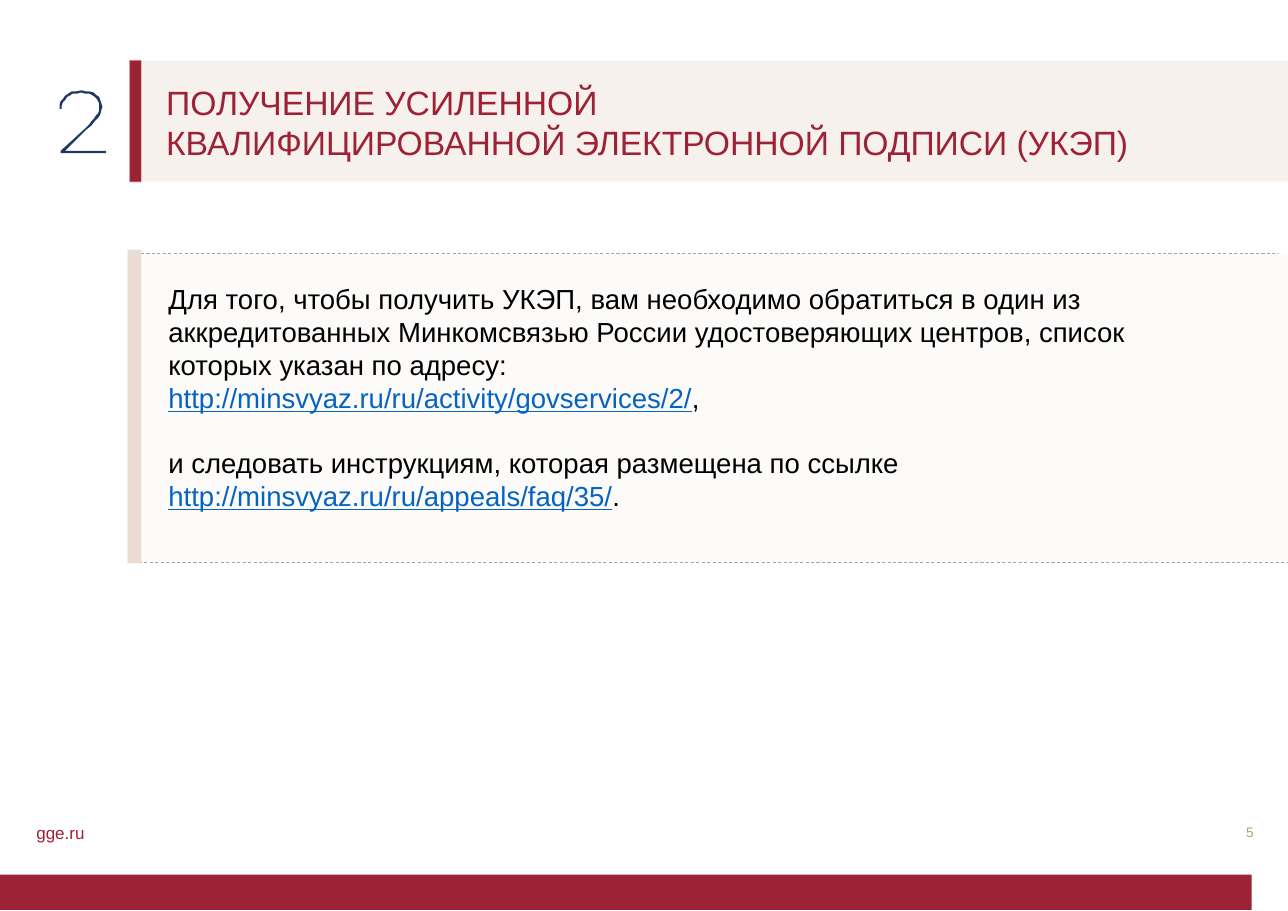
from dataclasses import dataclass
from lxml import etree
from pptx import Presentation
from pptx import util as u
from pptx.dml.color import RGBColor
from pptx.enum import dml, shapes, text
from pptx.oxml.ns import qn

CELL = u.Inches(0.1)
COLUMNS, ROWS = 116.9, 82.7


@dataclass(frozen=True)
class Theme:
    font: str = "Arial"
    crimson: str = "9D2235"
    bar: str = "9A2233"
    bar_edge: str = "BA2C44"
    sand: str = "E9DDD3"
    navy: str = "203864"
    bronze: str = "BD9A7A"
    link: str = "0563C1"
    black: str = "000000"
    white: str = "FFFFFF"
    dash: str = "A6A6A6"
    title_size: float = 22
    body_size: float = 18
    site_size: float = 11.1
    page_size: float = 9


THEME = Theme()
DIGIT_OUTLINE = [
    (42, 57), (1, 57), (1, 55), (24, 34), (27, 31), (29, 28), (31, 26),
    (33, 23), (35, 21), (36, 18), (36, 15), (36, 12), (35, 10), (34, 8),
    (32, 6), (29, 4), (27, 3), (23, 3), (20, 2), (16, 3), (12, 3), (9, 5),
    (7, 6), (5, 9), (3, 11), (2, 14), (2, 17), (0, 17), (0, 13), (1, 10),
    (3, 8), (5, 5), (8, 3), (11, 1), (15, 1), (20, 0), (24, 1), (27, 1),
    (31, 2), (33, 4), (36, 6), (37, 9), (38, 12), (39, 15), (38, 18),
    (37, 22), (35, 25), (32, 28), (29, 32), (24, 36), (5, 55), (42, 55),
]


@dataclass(frozen=True)
class Box:
    left: float
    top: float
    width: float
    height: float

    def inner(self, left, top, width, height):
        return Box(self.left + left, self.top + top, width, height)

    def emu(self):
        return [round(value * CELL) for value in (self.left, self.top, self.width, self.height)]


def apply(target, values):
    for name, value in values.items():
        setattr(target, name, value)


def paint(fill, color, opacity=100):
    fill.solid()
    fill.fore_color.rgb = RGBColor.from_string(color)
    if opacity < 100:
        for element in fill._xPr.iter(qn("a:srgbClr")):
            etree.SubElement(element, qn("a:alpha"), val=str(opacity * 1000))


def add_rectangle(slide, box, color, opacity=100, edge=None):
    shape = slide.shapes.add_shape(shapes.MSO_SHAPE.RECTANGLE, *box.emu())
    shape.shadow.inherit = False
    paint(shape.fill, color, opacity)
    if edge:
        shape.line.width = u.Pt(1)
        paint(shape.line.fill, edge, 41)
    else:
        shape.line.fill.background()
    return shape


def add_dashed_line(slide, box):
    left, top, width, height = box.emu()
    line = slide.shapes.add_connector(
        shapes.MSO_CONNECTOR.STRAIGHT, left, top, left + width, top + height)
    paint(line.line.fill, THEME.dash)
    apply(line.line, {"width": u.Pt(0.5), "dash_style": dml.MSO_LINE.DASH})
    etree.SubElement(line._element.spPr, qn("a:effectLst"))


def write(shape, paragraphs, size, margin=None, anchor=text.MSO_ANCHOR.TOP, **layout):
    frame = shape.text_frame
    apply(frame, {"word_wrap": True, "vertical_anchor": anchor})
    if margin is not None:
        apply(frame, {f"margin_{side}": margin for side in ("left", "top", "right", "bottom")})
    for index, runs in enumerate(paragraphs):
        paragraph = frame.add_paragraph() if index else frame.paragraphs[0]
        apply(paragraph, {"alignment": text.PP_ALIGN.LEFT, **layout})
        for content, color in runs:
            run = paragraph.add_run()
            run.text = content
            apply(run.font, {"name": THEME.font, "size": u.Pt(size),
                             "underline": color == THEME.link})
            run.font.color.rgb = RGBColor.from_string(color)
    return frame


def add_text(slide, box, paragraphs, size, **layout):
    return write(slide.shapes.add_textbox(*box.emu()), paragraphs, size, **layout)


def add_digit(slide, box):
    left, top, _, _ = box.emu()
    builder = slide.shapes.build_freeform(*DIGIT_OUTLINE[0], scale=CELL / 10)
    builder.add_line_segments(DIGIT_OUTLINE[1:], close=True)
    digit = builder.convert_to_shape(left, top)
    digit.shadow.inherit = False
    paint(digit.fill, THEME.navy)
    digit.line.fill.background()


def add_header(slide, box):
    add_rectangle(slide, box.inner(7.4, 0, box.width - 7.4, box.height), THEME.sand, 39)
    add_text(slide, box.inner(8.7, 1.4, 102.1, 9.2), [
        [("ПОЛУЧЕНИЕ УСИЛЕННОЙ", THEME.crimson)],
        [("КВАЛИФИЦИРОВАННОЙ ЭЛЕКТРОННОЙ ПОДПИСИ (УКЭП)", THEME.crimson)],
    ], THEME.title_size)
    add_rectangle(slide, box.inner(6.4, 0, 1, box.height), THEME.bar, edge=THEME.bar_edge)
    add_digit(slide, box.inner(0, 2.7, 4.2, 5.7))


def add_body(slide, box):
    add_rectangle(slide, box.inner(0.2, 0.3, box.width - 0.2, box.height - 0.3), THEME.sand, 10)
    add_dashed_line(slide, box.inner(0.5, box.height, box.width - 0.5, 0))
    frame = add_text(slide, box.inner(2.7, 2.4, 96.8, 22.2), [
        [("Для того, чтобы получить УКЭП, вам необходимо обратиться в один из "
          "аккредитованных Минкомсвязью России удостоверяющих центров, список "
          "которых указан по адресу:", THEME.black)],
        [("http://minsvyaz.ru/ru/activity/govservices/2/", THEME.link), (",", THEME.black)],
        [("и следовать инструкциям, которая размещена по ссылке ", THEME.black),
         ("http://minsvyaz.ru/ru/appeals/faq/35/", THEME.link), (".", THEME.black)],
    ], THEME.body_size)
    frame.paragraphs[-1].space_before = u.Pt(THEME.body_size * 1.15)
    add_dashed_line(slide, box.inner(0.7, 0.3, box.width - 1.5, 0))
    add_rectangle(slide, box.inner(0, 0, 1.2, box.height), THEME.sand, edge=THEME.sand)


def add_footer(slide, box):
    add_rectangle(slide, box.inner(0, 4.9, 113.6, 3.2), THEME.crimson)
    site = add_rectangle(slide, box.inner(3.3, 0, 10.6, 2.1), THEME.white)
    write(site, [[("gge.ru", THEME.crimson)]], THEME.site_size, margin=0,
          anchor=text.MSO_ANCHOR.MIDDLE)
    add_text(slide, box.inner(111.4, 0.3, 2.4, 3.1), [[("5", THEME.bronze)]],
             THEME.page_size, margin=0, alignment=text.PP_ALIGN.RIGHT,
             line_spacing=u.Pt(10.8))


def main():
    presentation = Presentation()
    apply(presentation, {"slide_width": round(COLUMNS * CELL),
                         "slide_height": round(ROWS * CELL)})
    slide = presentation.slides.add_slide(presentation.slide_layouts[6])
    add_footer(slide, Box(0, 74.5, COLUMNS, 8.2))
    add_header(slide, Box(5.4, 5.5, COLUMNS - 5.4, 11))
    add_body(slide, Box(11.6, 22.7, COLUMNS - 11.6, 28.4))
    presentation.save("out.pptx")


if __name__ == "__main__":
    main()
